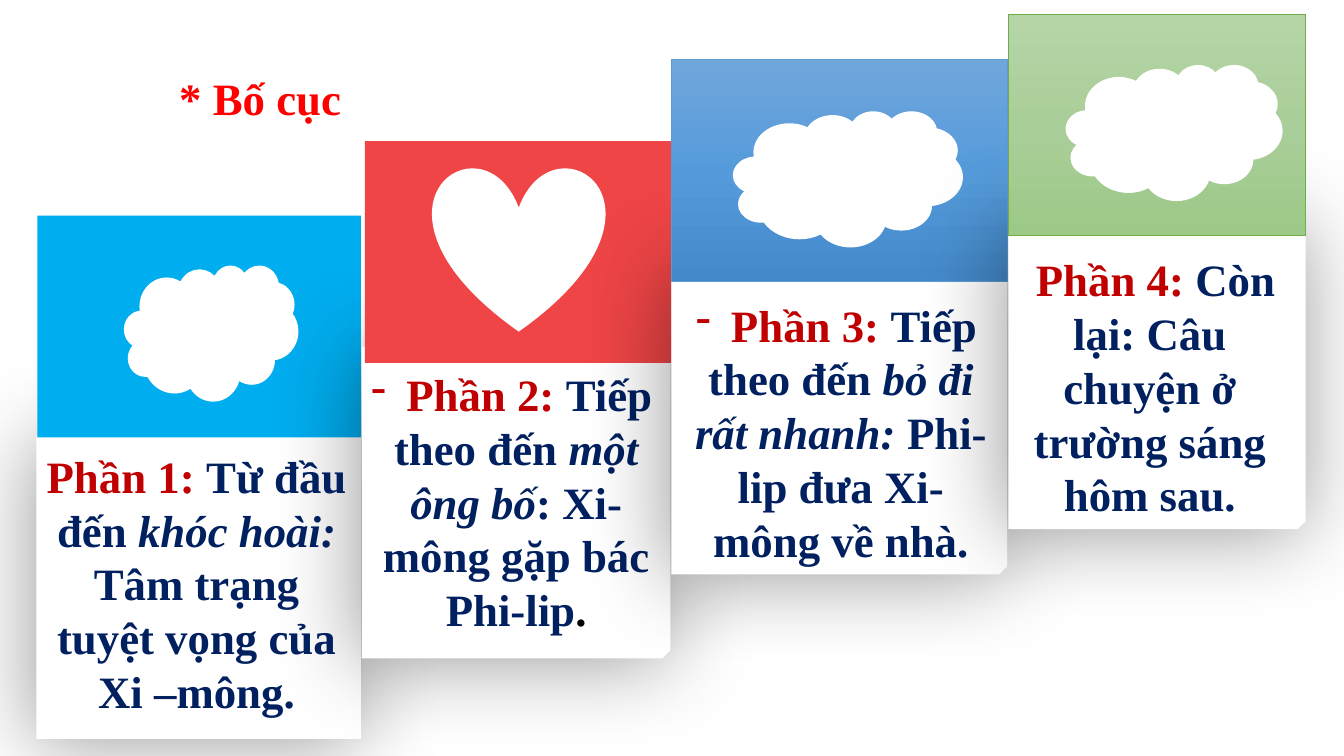
import copy
from dataclasses import dataclass

import pptx
import pptx.dml.color
import pptx.enum.shapes
import pptx.enum.text
import pptx.oxml
import pptx.oxml.ns
import pptx.util

Inches = pptx.util.Inches
Pt = pptx.util.Pt
qn = pptx.oxml.ns.qn
rgb = pptx.dml.color.RGBColor.from_string
Shape = pptx.enum.shapes.MSO_SHAPE


@dataclass(frozen=True)
class Theme:
    font: str = "Times New Roman"
    size: int = 32
    title: str = "FF0000"
    label: str = "C00000"
    body: str = "002060"
    black: str = "000000"
    white: str = "FFFFFF"
    cyan: str = "00ADEF"
    red: str = "EF4546"
    blues: tuple = ("71A6DB", "559BDB", "448ACA")
    greens: tuple = ("B5D5A7", "AACE9A", "9CC987")
    blue_edge: str = "5B9BD5"
    green_edge: str = "70AD47"


theme = Theme()
SHADOW = (
    '<a:outerShdw xmlns:a="http://schemas.openxmlformats.org/drawingml/2006/main"'
    f' blurRad="{Pt(65)}" dist="{Pt(3)}" dir="8100000" algn="tr" rotWithShape="0">'
    f'<a:srgbClr val="{theme.black}"><a:alpha val="40000"/></a:srgbClr></a:outerShdw>'
)


def paint(shape, color):
    """Give a shape a plain fill with no line and no shadow."""
    shape.shadow.inherit = False
    shape.fill.solid()
    shape.fill.fore_color.rgb = rgb(color)
    shape.line.fill.background()


def style(run, color, italic=False):
    font = run.font
    font.name, font.size = theme.font, Pt(theme.size)
    font.bold, font.italic = True, italic
    font.color.rgb = rgb(color)


# Boxes are left, top, width, height; a run is text, colour, italic
parts = [
    dict(card=(0.36, 4.33, 3.22, 3), cut=0,
         head=(0.37, 2.14, 3.21, 2.2), fill=theme.cyan, edge=None,
         icon=Shape.CLOUD, spot=(1.23, 2.63, 1.73, 1.35),
         text=(0.33, 4.4, 3.24, 2.79), dash=False,
         runs=[("Phần 1: ", theme.label, False), ("Từ đầu đến ", theme.body, False),
               ("khóc hoài: ", theme.body, True),
               ("Tâm trạng tuyệt vọng của Xi –mông.", theme.body, False)]),
    dict(card=(3.59, 3.44, 3.06, 3.09), cut=0.08,
         head=(3.62, 1.4, 3.04, 2.2), fill=theme.red, edge=None,
         icon=Shape.HEART, spot=(4.29, 1.65, 1.71, 1.64),
         text=(3.57, 3.59, 3.1, 2.79), dash=True,
         runs=[(" Phần 2: ", theme.label, False), ("Tiếp theo đến ", theme.body, False),
               ("một ông bố", theme.body, True),
               (": Xi-mông gặp bác Phi-lip", theme.body, False),
               (".", theme.black, False)]),
    dict(card=(6.66, 2.63, 3.33, 3.07), cut=0.08,
         head=(6.66, 0.59, 3.33, 2.2), fill=theme.blues, edge=theme.blue_edge,
         icon=Shape.CLOUD, spot=(7.27, 1.1, 2.28, 1.35),
         text=(6.78, 2.9, 3.12, 2.79), dash=True,
         runs=[(" Phần 3: ", theme.label, False), ("Tiếp theo đến ", theme.body, False),
               ("bỏ đi rất nhanh:", theme.body, True),
               (" Phi-lip đưa Xi-mông về nhà.", theme.body, False)]),
    dict(card=(10, 2.18, 2.95, 3.07), cut=0.08,
         head=(10, 0.14, 2.95, 2.2), fill=theme.greens, edge=theme.green_edge,
         icon=Shape.CLOUD, spot=(10.57, 0.64, 2.15, 1.35),
         text=(9.94, 2.45, 2.93, 2.79), dash=False,
         runs=[(" Phần 4: ", theme.label, False),
               ("Còn lại: Câu chuyện ở trường sáng hôm sau.", theme.body, False)]),
]

deck = pptx.Presentation()
deck.slide_width, deck.slide_height = Inches(13.33), Inches(7.5)
slide = deck.slides.add_slide(deck.slide_layouts[5])
shapes = slide.shapes

title = shapes.title
title.left, title.top = Inches(1.67), Inches(0.65)
title.width, title.height = Inches(1.82), Inches(0.64)
frame = title.text_frame
frame.text = "* Bố cục"
frame.word_wrap = False
frame.auto_size = pptx.enum.text.MSO_AUTO_SIZE.SHAPE_TO_FIT_TEXT
frame.vertical_anchor = pptx.enum.text.MSO_ANCHOR.TOP
frame.paragraphs[0].alignment = pptx.enum.text.PP_ALIGN.CENTER
style(frame.paragraphs[0].runs[0], theme.title)

# The first two parts share a layer, so the second shadow stays under the first text
for layer in (parts[:2], parts[2:3], parts[3:]):
    for part in layer:
        x, y, w, h = part["card"]
        cut = part["cut"]
        if cut:
            right, base = x + w, y + h
            pen = shapes.build_freeform(Inches(x), Inches(y))
            pen.add_line_segments(
                [(Inches(a), Inches(b)) for a, b in (
                    (right, y), (right, base - cut), (right - cut, base), (x, base))])
            card = pen.convert_to_shape()
        else:
            card = shapes.add_shape(Shape.RECTANGLE, *map(Inches, part["card"]))
        paint(card, theme.white)
        effects = card.element.spPr.find(qn("a:effectLst"))
        effects.append(pptx.oxml.parse_xml(SHADOW))

        head = shapes.add_shape(Shape.RECTANGLE, *map(Inches, part["head"]))
        if part["edge"]:
            head.shadow.inherit = False
            head.fill.gradient()
            head.fill.gradient_angle = 270
            stops = next(head.element.spPr.iter(qn("a:gsLst")))
            stops.insert(1, copy.deepcopy(stops[0]))
            for stop, place, color in zip(
                    head.fill.gradient_stops, (0, 0.5, 1), part["fill"]):
                stop.position = place
                stop.color.rgb = rgb(color)
            head.line.color.rgb = rgb(part["edge"])
            head.line.width = Pt(0.5)
        else:
            paint(head, part["fill"])

    for part in layer:
        icon = shapes.add_shape(part["icon"], *map(Inches, part["spot"]))
        paint(icon, theme.white)

        frame = shapes.add_textbox(*map(Inches, part["text"])).text_frame
        frame.word_wrap = True
        frame.auto_size = pptx.enum.text.MSO_AUTO_SIZE.SHAPE_TO_FIT_TEXT
        para = frame.paragraphs[0]
        para.alignment = pptx.enum.text.PP_ALIGN.CENTER
        if part["dash"]:
            bullet = para._p.get_or_add_pPr().makeelement(qn("a:buChar"), {"char": "-"})
            para._p.get_or_add_pPr().append(bullet)
        for words, color, italic in part["runs"]:
            run = para.add_run()
            run.text = words
            style(run, color, italic)

deck.save("out.pptx")
